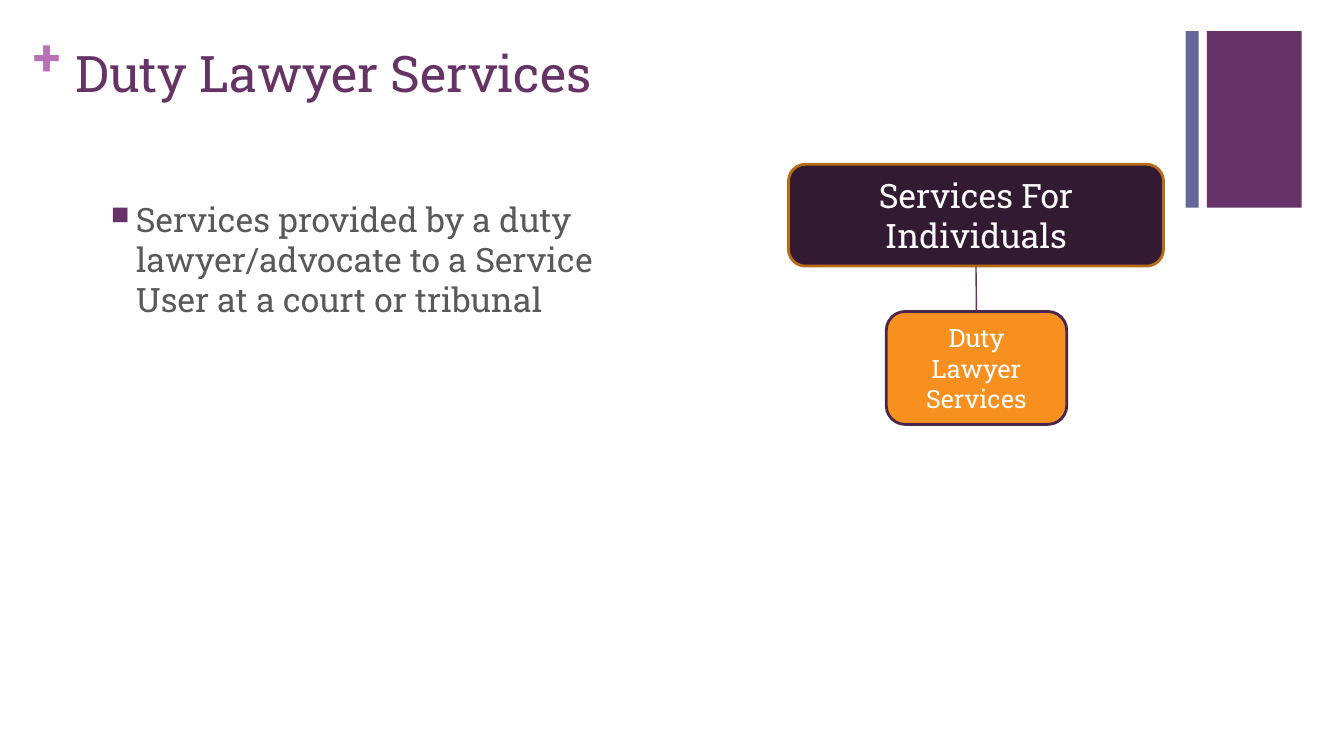
"""Build the Duty Lawyer Services slide."""
from dataclasses import dataclass

from lxml.etree import SubElement
from pptx import Presentation
from pptx.dml.color import RGBColor
from pptx.enum.shapes import MSO_CONNECTOR as Link, MSO_SHAPE as Form
from pptx.enum.text import MSO_ANCHOR as Anchor, MSO_AUTO_SIZE as Fit, PP_ALIGN as Align
from pptx.oxml.ns import qn
from pptx.shapes.autoshape import Shape
from pptx.slide import Slide
from pptx.text.text import TextFrame
from pptx.util import Inches, Pt

FONT = "Roboto Slab"
PLUM = "663366"


@dataclass
class Area:
    left: float
    top: float
    width: float
    height: float

    def sides(self) -> list[int]:
        return [Inches(n) for n in (self.left, self.top, self.width, self.height)]


@dataclass
class Box:
    area: Area
    fill: str
    line: str = ""
    text: str = ""
    size: int = 18
    form: Form = Form.ROUNDED_RECTANGLE


BARS = [
    Box(Area(11.97, 0.31, 0.94, 1.75), PLUM, form=Form.RECTANGLE),
    Box(Area(11.76, 0.31, 0.13, 1.75), "666699", form=Form.RECTANGLE),
]
GROUP = Box(Area(7.82, 1.63, 3.72, 1.01), "331A33", "B76B16", "Services For Individuals", 24)
DUTY = Box(Area(8.79, 3.09, 1.79, 1.12), "F7901E", "4B264B", "Duty Lawyer Services")


def color(code: str) -> RGBColor:
    return RGBColor.from_string(code)


def write(frame: TextFrame, text: str, *, size: int, ink: str, bold: bool = False,
          align: Align = Align.LEFT, anchor: Anchor = Anchor.TOP,
          inset: bool = True, bullet: str = "") -> None:
    frame.word_wrap = True
    frame.auto_size = Fit.NONE
    frame.vertical_anchor = anchor
    if not inset:
        frame.margin_left = frame.margin_right = 0
        frame.margin_top = frame.margin_bottom = 0
    para = frame.paragraphs[0]
    para.alignment = align
    run = para.add_run()
    run.text = text
    font = run.font
    font.name, font.size, font.bold = FONT, Pt(size), bold
    font.color.rgb = color(ink)
    if bullet:
        para.space_before = Pt(20)
        props = para._p.get_or_add_pPr()
        props.set("marL", str(Inches(0.25)))
        props.set("indent", str(Inches(-0.25)))
        tint = SubElement(props, qn("a:buClr"))
        SubElement(tint, qn("a:srgbClr"), val=PLUM)
        SubElement(props, qn("a:buSzPct"), val="75000")
        SubElement(props, qn("a:buChar"), char=bullet)


def draw(slide: Slide, box: Box) -> Shape:
    shape = slide.shapes.add_shape(box.form, *box.area.sides())
    shape.shadow.inherit = False
    shape.fill.solid()
    shape.fill.fore_color.rgb = color(box.fill)
    if box.line:
        shape.line.color.rgb = color(box.line)
        shape.line.width = Pt(2)
    else:
        shape.line.fill.background()
    if box.text:
        write(shape.text_frame, box.text, size=box.size, ink="FFFFFF",
              align=Align.CENTER, anchor=Anchor.MIDDLE)
    return shape


def join(slide: Slide, upper: Shape, lower: Shape) -> None:
    line = slide.shapes.add_connector(Link.STRAIGHT, 0, 0, 0, 0)
    line.begin_connect(upper, 2)
    line.end_connect(lower, 0)
    line.line.color.rgb = color("653165")
    line.line.width = Pt(1)
    SubElement(line._element.spPr, qn("a:effectLst"))


def note(slide: Slide, area: Area) -> TextFrame:
    return slide.shapes.add_textbox(*area.sides()).text_frame


def main() -> None:
    deck = Presentation()
    deck.slide_width, deck.slide_height = Inches(13.33), Inches(7.5)
    slide = deck.slides.add_slide(deck.slide_layouts[5])
    for bar in BARS:
        draw(slide, bar)
    write(note(slide, Area(0.33, 0.25, 0.38, 0.61)), "+",
          size=36, ink="B870B8", bold=True, inset=False)
    title = slide.shapes.title
    title.left, title.top, title.width, title.height = Area(0.65, 0.37, 10.24, 1.25).sides()
    write(title.text_frame, "Duty Lawyer Services", size=36, ink=PLUM)
    write(note(slide, Area(1, 1.92, 5.42, 4.05)),
          "Services provided by a duty lawyer/advocate to a Service User at a court or tribunal",
          size=24, ink="595959", bullet="■")
    join(slide, draw(slide, GROUP), draw(slide, DUTY))
    deck.save("out.pptx")


if __name__ == "__main__":
    main()
